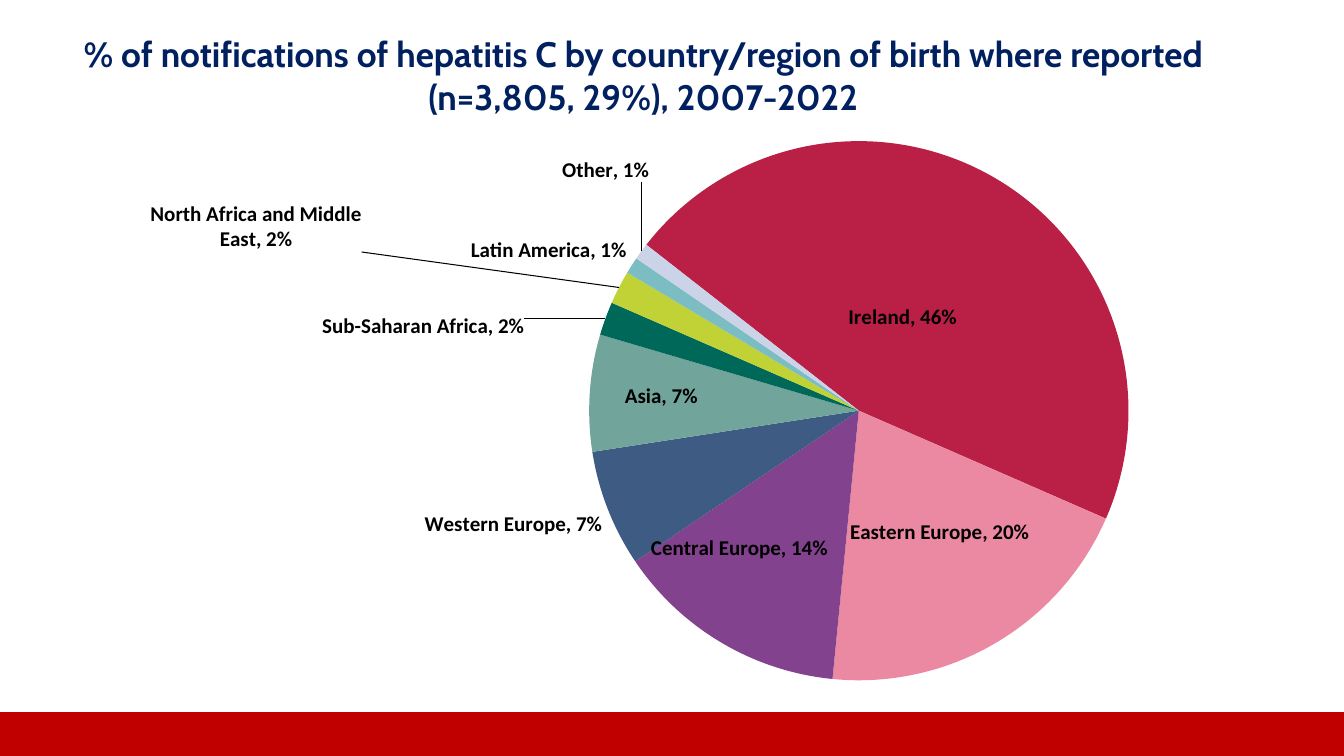
from lxml import etree
from pptx import Presentation
from pptx.chart.data import CategoryChartData
from pptx.dml.color import RGBColor
from pptx.enum.chart import XL_CHART_TYPE as ChartType, XL_LABEL_POSITION as LabelPosition
from pptx.enum.shapes import MSO_SHAPE as ShapeKind
from pptx.enum.text import MSO_ANCHOR as Anchor, PP_ALIGN as Align
from pptx.oxml import parse_xml
from pptx.oxml.ns import nsdecls, qn
from pptx.util import Inches, Pt

RED = RGBColor(0xC0, 0x00, 0x00)
NAVY = RGBColor(0x00, 0x20, 0x60)
BLACK = RGBColor(0x00, 0x00, 0x00)
CRIMSON = RGBColor(0xBA, 0x1F, 0x46)
PINK = RGBColor(0xEB, 0x89, 0xA3)
PURPLE = RGBColor(0x82, 0x42, 0x8D)
BLUE = RGBColor(0x3E, 0x5B, 0x84)
SAGE = RGBColor(0x71, 0xA5, 0x9C)
GREEN = RGBColor(0x00, 0x68, 0x58)
LIME = RGBColor(0xC0, 0xD2, 0x36)
TEAL = RGBColor(0x7C, 0xBD, 0xC4)
LAVENDER = RGBColor(0xCB, 0xD3, 0xE8)

INSIDE, OUTSIDE = LabelPosition.CENTER, LabelPosition.OUTSIDE_END
REGIONS = [
    ("Ireland", 46, CRIMSON, INSIDE, (-0.02, 0.04)),
    ("Eastern Europe", 20, PINK, INSIDE, (0.01, 0.01)),
    ("Central Europe", 14, PURPLE, INSIDE, (-0.04, 0.04)),
    ("Western Europe", 7, BLUE, OUTSIDE, None),
    ("Asia", 7, SAGE, INSIDE, (-0.05, -0.01)),
    ("Sub-Saharan Africa", 2, GREEN, OUTSIDE, (-0.06, 0.04)),
    ("North Africa and Middle East", 2, LIME, OUTSIDE, (-0.2, -0.06)),
    ("Latin America", 1, TEAL, OUTSIDE, None),
    ("Other", 1, LAVENDER, OUTSIDE, (0.01, -0.12)),
]
LABEL_FONT = {"name": "Calibri", "size": Pt(15), "bold": True}
TITLE_FONT = {"name": "Cabin", "size": Pt(25.2), "bold": True}


def style_font(font, values, color):
    for name, value in values.items():
        setattr(font, name, value)
    font.color.rgb = color


def manual_layout(values):
    parts = "".join(f'<c:{name} val="{value}"/>' for name, value in values.items())
    return parse_xml(f'<c:layout {nsdecls("c")}><c:manualLayout>{parts}</c:manualLayout></c:layout>')


deck = Presentation()
deck.slide_width, deck.slide_height = Inches(13.33), Inches(7.5)
page = deck.slides.add_slide(deck.slide_layouts[6])

footer = page.shapes.add_shape(ShapeKind.RECTANGLE, Inches(0), Inches(7.08), Inches(13.33), Inches(0.42))
footer.shadow.inherit = False
footer.fill.solid()
footer.fill.fore_color.rgb = RED
footer.line.color.rgb = RED
footer.line.width = Pt(2)

title_box = page.shapes.add_textbox(Inches(0.67), Inches(0.33), Inches(11.42), Inches(0.83))
frame = title_box.text_frame
frame_format = {
    "word_wrap": True,
    "vertical_anchor": Anchor.MIDDLE,
    "margin_left": Inches(0.12),
    "margin_right": Inches(0.12),
    "margin_top": Inches(0.06),
    "margin_bottom": Inches(0.06),
}
for name, value in frame_format.items():
    setattr(frame, name, value)
para = frame.paragraphs[0]
para.alignment = Align.CENTER
span = para.add_run()
span.text = "% of notifications of hepatitis C by country/region of birth where reported (n=3,805, 29%), 2007-2022"
style_font(span.font, TITLE_FONT, NAVY)

data = CategoryChartData()
data.categories = [f"{region}, {share}%" for region, share, *_ in REGIONS]
data.add_series("Series 1", [share for _, share, *_ in REGIONS])
chart = page.shapes.add_chart(
    ChartType.PIE, Inches(0.25), Inches(1.33), Inches(12.5), Inches(5.42), data
).chart
chart.has_title = False
chart.has_legend = False
style_font(chart.font, {"name": "Calibri", "size": Pt(10)}, BLACK)

plot = chart.plots[0]
plot.vary_by_categories = True
pie = chart.element.find(".//" + qn("c:pieChart"))
start = pie.find(qn("c:firstSliceAng"))
if start is None:
    start = etree.SubElement(pie, qn("c:firstSliceAng"))
start.set("val", "308")
plot_area = chart.element.find(".//" + qn("c:plotArea"))
for layout in plot_area.findall(qn("c:layout")):
    plot_area.remove(layout)
plot_area.insert(0, manual_layout({
    "layoutTarget": "inner", "xMode": "edge", "yMode": "edge",
    "x": 0.447, "y": 0.013, "w": 0.429, "h": 0.987,
}))

series = plot.series[0]
labels = series.data_labels
labels.show_value = False
labels.show_category_name = True
labels.position = OUTSIDE
style_font(labels.font, LABEL_FONT, BLACK)

for index, (_, _, color, position, offset) in enumerate(REGIONS):
    point = series.points[index]
    point.format.fill.solid()
    point.format.fill.fore_color.rgb = color
    point.format.line.fill.background()
    if offset:
        style_font(point.data_label.font, LABEL_FONT, BLACK)
        point.data_label.position = position
        label = labels._element.findall(qn("c:dLbl"))[-1]
        label.find(qn("c:showVal")).set("val", "0")
        label.find(qn("c:showCatName")).set("val", "1")
        label.insert(1, manual_layout({"x": offset[0], "y": offset[1]}))

leader = labels._element.find(qn("c:showLeaderLines"))
if leader is None:
    leader = etree.SubElement(labels._element, qn("c:showLeaderLines"))
leader.set("val", "1")
leader.addnext(parse_xml(
    f'<c:leaderLines {nsdecls("c", "a")}><c:spPr><a:ln w="9525"><a:solidFill>'
    f'<a:srgbClr val="{BLACK}"/></a:solidFill></a:ln></c:spPr></c:leaderLines>'
))

deck.save("out.pptx")
